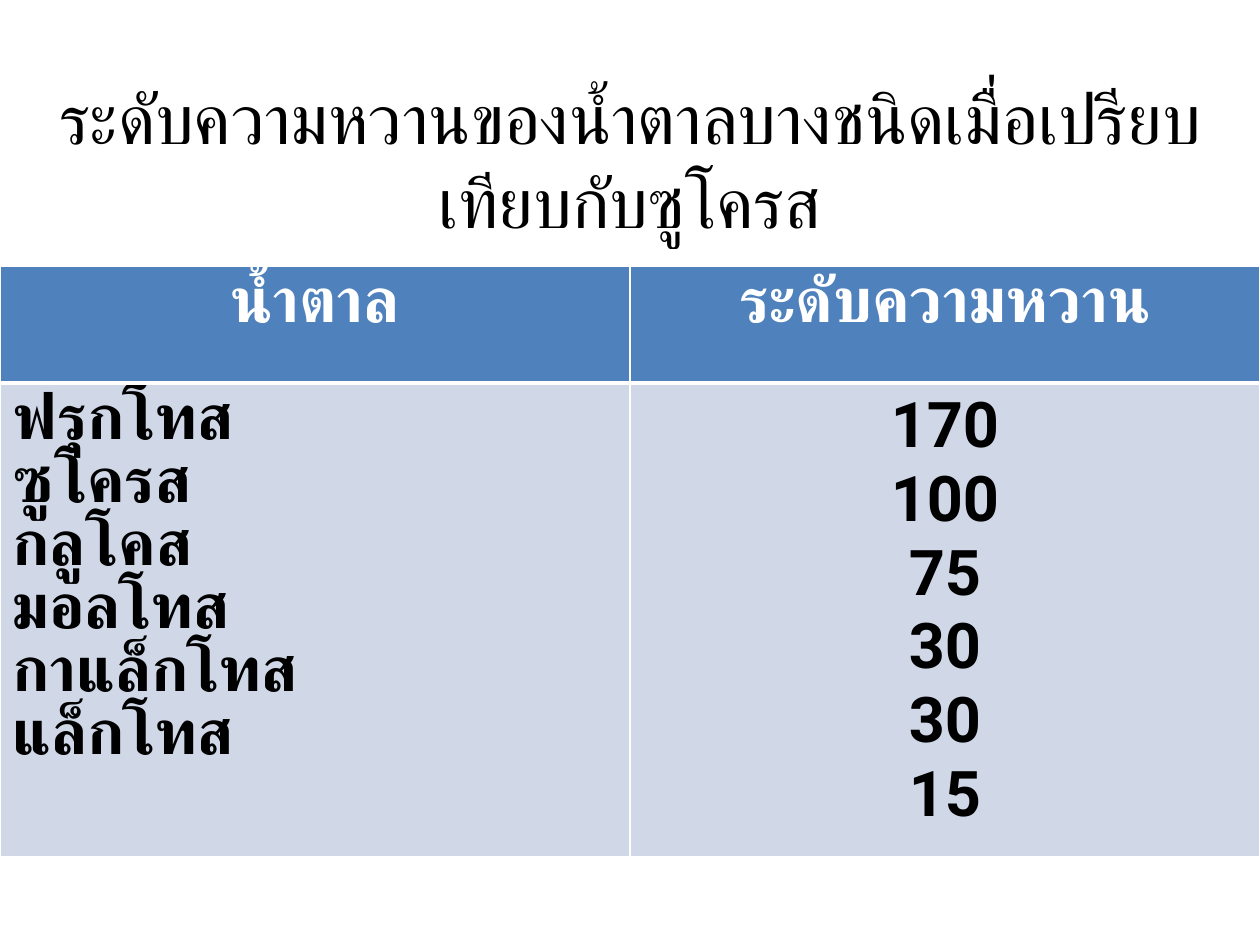
from lxml import etree
from pptx import Presentation
from pptx.dml.color import RGBColor
from pptx.enum import text
from pptx.oxml import ns
from pptx.util import Pt


def color(value):
    return RGBColor.from_string(value)


class Deck:
    title = {"name": "Calibri", "size": Pt(40), "bold": False}
    cell = {"name": "Roboto", "size": Pt(36), "bold": True}
    border = "FFFFFF"

    def __init__(self, prs):
        self.prs = prs
        self.s = prs.slides.add_slide(prs.slide_layouts[6])

    def put_lines(self, tf, lines, fmt, hue, align):
        for i, line in enumerate(lines):
            p = tf.add_paragraph() if i else tf.paragraphs[0]
            p.alignment = align
            r = p.add_run()
            r.text = line
            for key, value in fmt.items():
                setattr(r.font, key, value)
            r.font.color.rgb = color(hue)

    def heading(self, line, x, y, w, h):
        sp = self.s.shapes.add_textbox(Pt(x), Pt(y), Pt(w), Pt(h))
        tf = sp.text_frame
        tf.word_wrap = True
        tf.vertical_anchor = text.MSO_ANCHOR.MIDDLE
        self.put_lines(tf, [line], self.title, "000000", text.PP_ALIGN.CENTER)

    def edges(self, cell, widths):
        pr = cell._tc.get_or_add_tcPr()
        for i, (side, width) in enumerate(widths.items()):
            ln = etree.Element(ns.qn(f"a:ln{side}"), w=str(Pt(width)))
            fill = etree.SubElement(ln, ns.qn("a:solidFill"))
            etree.SubElement(fill, ns.qn("a:srgbClr"), val=self.border)
            pr.insert(i, ln)

    def table(self, rows, heights, x, y, w):
        h = sum(heights)
        tbl = self.s.shapes.add_table(
            len(rows), len(rows[0]), Pt(x), Pt(y), Pt(w), Pt(h)).table
        for i, row in enumerate(rows):
            tbl.rows[i].height = Pt(heights[i])
            fill, hue = ("D0D8E8", "000000") if i else ("4F81BD", "FFFFFF")
            for j, lines in enumerate(row):
                cell = tbl.cell(i, j)
                cell.fill.solid()
                cell.fill.fore_color.rgb = color(fill)
                left = i and not j
                align = text.PP_ALIGN.LEFT if left else text.PP_ALIGN.CENTER
                self.put_lines(cell.text_frame, lines, self.cell, hue, align)
                self.edges(cell, {"L": 1, "R": 1, "T": 3 if i else 1,
                                  "B": 1 if i else 3})


def main():
    prs = Presentation()
    prs.slide_width, prs.slide_height = Pt(720), Pt(540)
    deck = Deck(prs)
    deck.heading("ระดับความหวานของน้ำตาลบางชนิดเมื่อเปรียบเทียบกับซูโครส",
                 0, 33.84, 720, 113.04)
    sweetness = {"ฟรุกโทส": 170, "ซูโครส": 100, "กลูโคส": 75,
                 "มอลโทส": 30, "กาแล็กโทส": 30, "แล็กโทส": 15}
    rows = [[["น้ำตาล"], ["ระดับความหวาน"]],
            [list(sweetness), [str(v) for v in sweetness.values()]]]
    deck.table(rows, [66.96, 270.72], 0, 151.92, 720)
    prs.save("out.pptx")


if __name__ == "__main__":
    main()
